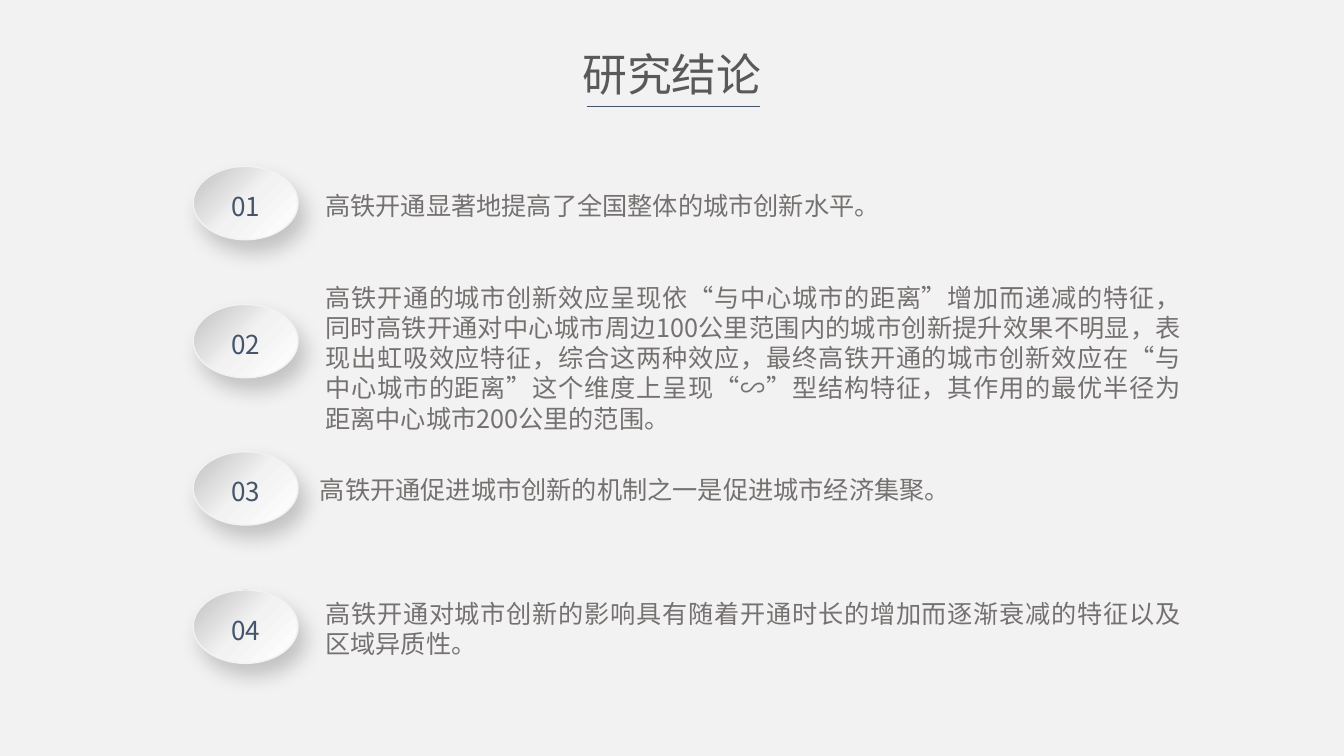
from lxml import etree
from pptx import Presentation
from pptx.dml.color import RGBColor
from pptx.enum.shapes import MSO_CONNECTOR, MSO_SHAPE
from pptx.enum.text import MSO_ANCHOR, MSO_AUTO_SIZE, PP_ALIGN
from pptx.oxml.ns import qn
from pptx.util import Pt

# Content: text, box left, box top, box height, alignment, badge top
LEFT, JUSTIFY, CENTER = PP_ALIGN.LEFT, PP_ALIGN.JUSTIFY, PP_ALIGN.CENTER
TITLE = "研究结论"
CONCLUSIONS = [
    ("高铁开通显著地提高了全国整体的城市创新水平。",
     225.2, 132.4, 29, JUSTIFY, 118.8),
    ("高铁开通的城市创新效应呈现依“与中心城市的距离”增加而递减的特征，"
     "同时高铁开通对中心城市周边100公里范围内的城市创新提升效果不明显，"
     "表现出虹吸效应特征，综合这两种效应，最终高铁开通的城市创新效应"
     "在“与中心城市的距离”这个维度上呈现“∽”型结构特征，其作用的最优"
     "半径为距离中心城市200公里的范围。",
     225.2, 197.8, 116.6, JUSTIFY, 217.4),
    ("高铁开通促进城市创新的机制之一是促进城市经济集聚。",
     221.4, 335.5, 29, LEFT, 322.6),
    ("高铁开通对城市创新的影响具有随着开通时长的增加而逐渐衰减的特征以及区域异质性。",
     225.2, 423.8, 51.1, JUSTIFY, 421.4),
]

# Style
FONT = "Noto Sans CJK SC"
BACKGROUND, TITLE_GRAY, TEXT_GRAY, NAVY = "F2F2F2", "595959", "767171", "44546A"
BADGE_STOPS = [(0, "BFBFBF"), (50, "F2F2F2"), (100, "FFFFFF")]
BADGE_LEFT, BADGE_WIDTH, BADGE_HEIGHT = 138, 74.9, 52.4
TEXT_RIGHT = 851


def color(hex_string):
    return RGBColor.from_string(hex_string)


def add_element(parent, tag, **attributes):
    values = {name: str(value) for name, value in attributes.items()}
    return etree.SubElement(parent, qn(tag), values)


def write_text(shape, text, size, hex_color, align=LEFT, wrap=True, spacing=None):
    frame = shape.text_frame
    frame.word_wrap = wrap
    paragraph = frame.paragraphs[0]
    paragraph.alignment = align
    if spacing:
        paragraph.line_spacing = spacing
    run = paragraph.add_run()
    run.text = text
    run.font.size = Pt(size)
    run.font.name = FONT
    run.font.color.rgb = color(hex_color)
    add_element(run.font._element, "a:ea", typeface=FONT)
    return frame


def add_text_box(slide, text, left, top, width, height, **text_format):
    box = slide.shapes.add_textbox(Pt(left), Pt(top), Pt(width), Pt(height))
    frame = write_text(box, text, **text_format)
    frame.auto_size = MSO_AUTO_SIZE.SHAPE_TO_FIT_TEXT


def add_badge(slide, label, top):
    badge = slide.shapes.add_shape(MSO_SHAPE.OVAL, Pt(BADGE_LEFT), Pt(top),
                                   Pt(BADGE_WIDTH), Pt(BADGE_HEIGHT))
    badge.line.color.rgb = color(BACKGROUND)
    badge.line.width = Pt(1)

    # Diagonal gradient with three stops
    badge.fill.gradient()
    badge.fill.gradient_angle = 315
    properties = badge._element.spPr
    stops = properties.find(".//" + qn("a:gsLst"))
    for stop in list(stops):
        stops.remove(stop)
    for percent, hex_color in BADGE_STOPS:
        stop = add_element(stops, "a:gs", pos=percent * 1000)
        add_element(stop, "a:srgbClr", val=hex_color)

    # Soft shadow to the lower right
    badge.shadow.inherit = False
    shadow = add_element(properties.find(qn("a:effectLst")), "a:outerShdw",
                         blurRad=Pt(15), dist=Pt(10), dir=59 * 60000,
                         algn="ctr", rotWithShape=0)
    shade = add_element(shadow, "a:srgbClr", val="000000")
    add_element(shade, "a:alpha", val=20000)

    frame = write_text(badge, label, size=18.6, hex_color=NAVY,
                       align=CENTER, spacing=1.2)
    frame.vertical_anchor = MSO_ANCHOR.MIDDLE
    frame.margin_left = frame.margin_right = 0
    frame.margin_top = frame.margin_bottom = 0


def main():
    presentation = Presentation()
    presentation.slide_width, presentation.slide_height = Pt(960), Pt(540)
    slide = presentation.slides.add_slide(presentation.slide_layouts[6])
    slide.background.fill.solid()
    slide.background.fill.fore_color.rgb = color(BACKGROUND)

    # Title and underline
    add_text_box(slide, TITLE, 408, 29.9, 144, 46, size=32,
                 hex_color=TITLE_GRAY, align=CENTER, wrap=False)
    underline = slide.shapes.add_connector(MSO_CONNECTOR.STRAIGHT, Pt(419.5),
                                           Pt(76), Pt(542.6), Pt(76))
    underline.line.color.rgb = color(NAVY)
    underline.line.width = Pt(0.5)
    add_element(underline._element.spPr, "a:effectLst")

    # Numbered conclusions
    for number, conclusion in enumerate(CONCLUSIONS, start=1):
        text, left, top, height, align, badge_top = conclusion
        add_badge(slide, f"{number:02d}", badge_top)
        add_text_box(slide, text, left, top, TEXT_RIGHT - left, height,
                     size=18, hex_color=TEXT_GRAY, align=align)

    presentation.save("out.pptx")


if __name__ == "__main__":
    main()
